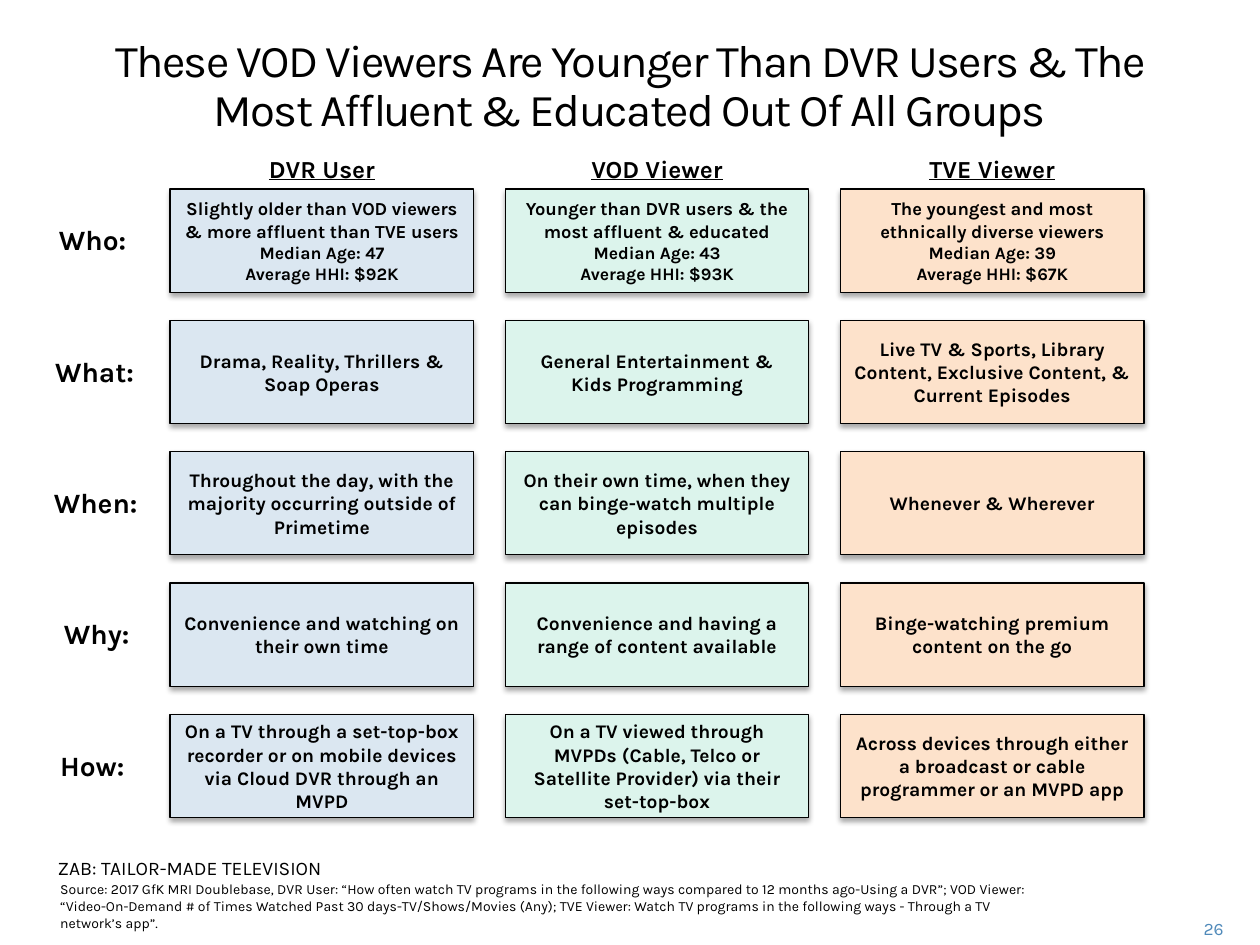
from lxml.etree import SubElement
from pptx import Presentation
from pptx.dml.color import RGBColor
from pptx.enum.shapes import MSO_SHAPE
from pptx.enum.text import MSO_ANCHOR, PP_ALIGN
from pptx.oxml.ns import qn
from pptx.util import Inches, Pt

BLACK = RGBColor(0x00, 0x00, 0x00)
PAGE_BLUE = RGBColor(0x50, 0x8A, 0xBA)
DVR_BLUE = RGBColor(0xDB, 0xE7, 0xF1)
VOD_GREEN = RGBColor(0xDC, 0xF4, 0xEC)
TVE_ORANGE = RGBColor(0xFD, 0xE2, 0xCB)
FONT = "Karla"

# Content
TITLE = "These VOD Viewers Are Younger Than DVR Users & The Most Affluent & Educated Out Of All Groups"
QUESTIONS = [("Who:", 0.37), ("What:", 0.34), ("When:", 0.33), ("Why:", 0.41), ("How:", 0.38)]  # label, left
GROUPS = [
    ("DVR User", DVR_BLUE, [
        ["Slightly older than VOD viewers & more affluent than TVE users",
         "Median Age: 47", "Average HHI: $92K"],
        ["Drama, Reality, Thrillers & Soap Operas"],
        ["Throughout the day, with the majority occurring outside of Primetime"],
        ["Convenience and watching on their own time"],
        ["On a TV through a set-top-box recorder or on mobile devices via Cloud DVR through an MVPD"],
    ]),
    ("VOD Viewer", VOD_GREEN, [
        ["Younger than DVR users & the most affluent & educated",
         "Median Age: 43", "Average HHI: $93K"],
        ["General Entertainment & Kids Programming"],
        ["On their own time, when they can binge-watch multiple episodes"],
        ["Convenience and having a range of content available"],
        ["On a TV viewed through MVPDs (Cable, Telco or Satellite Provider) via their set-top-box"],
    ]),
    ("TVE Viewer", TVE_ORANGE, [
        ["The youngest and most ethnically diverse viewers",
         "Median Age: 39", "Average HHI: $67K"],
        ["Live TV & Sports, Library Content, Exclusive Content, & Current Episodes"],
        ["Whenever & Wherever"],
        ["Binge-watching premium content on the go"],
        ["Across devices through either a broadcast or cable programmer or an MVPD app"],
    ]),
]
REPORT = "ZAB: TAILOR-MADE TELEVISION"
SOURCE = ("Source: 2017 GfK MRI Doublebase, DVR User: “How often watch TV programs in the following ways "
          "compared to 12 months ago-Using a DVR”; VOD Viewer: “Video-On-Demand # of Times Watched Past "
          "30 days-TV/Shows/Movies (Any); TVE Viewer: Watch TV programs in the following ways - "
          "Through a TV network’s app”.")
PAGE = "26"

# Grid, in inches
GRID_LEFT, GRID_TOP = 1.35, 1.5
COLUMN_STEP, ROW_STEP = 2.66, 1.042
CARD_WIDTH, CARD_HEIGHT = 2.41, 0.82
HEADING_WIDTH, HEADING_HEIGHT = 2, 0.34


def style(paragraph, text, size, align=PP_ALIGN.LEFT, bold=False, color=BLACK):
    paragraph.text = text
    paragraph.alignment = align
    font = paragraph.font
    font.name, font.size, font.bold = FONT, Pt(size), bold
    font.color.rgb = color


def add_label(slide, text, left, top, width, height, size, **look):
    label = slide.shapes.add_textbox(Inches(left), Inches(top), Inches(width), Inches(height))
    label.text_frame.word_wrap = True
    paragraph = label.text_frame.paragraphs[0]
    style(paragraph, text, size, **look)
    return paragraph


def add_soft_shadow(card):
    card.shadow.inherit = False
    effects = card._element.spPr.find(qn("a:effectLst"))
    shadow = SubElement(effects, qn("a:outerShdw"), blurRad=str(Pt(3.1)), dist=str(Pt(1.8)),
                        dir="5400000", rotWithShape="0")
    color = SubElement(shadow, qn("a:srgbClr"), val=str(BLACK))
    SubElement(color, qn("a:alpha"), val="35000")


def add_card(slide, lines, left, top, fill):
    card = slide.shapes.add_shape(MSO_SHAPE.RECTANGLE, Inches(left), Inches(top),
                                  Inches(CARD_WIDTH), Inches(CARD_HEIGHT))
    card.fill.solid()
    card.fill.fore_color.rgb = fill
    card.line.color.rgb = BLACK
    card.line.width = Pt(0.75)
    add_soft_shadow(card)
    frame = card.text_frame
    frame.word_wrap = True
    frame.vertical_anchor = MSO_ANCHOR.MIDDLE
    sizes = [11] if len(lines) == 1 else [10.5, 10, 10]
    for index, (line, size) in enumerate(zip(lines, sizes)):
        paragraph = frame.add_paragraph() if index else frame.paragraphs[0]
        style(paragraph, line, size, align=PP_ALIGN.CENTER, bold=True)


def main():
    deck = Presentation()
    deck.slide_width, deck.slide_height = Inches(10), Inches(7.5)
    slide = deck.slides.add_slide(deck.slide_layouts[6])

    # Title
    title = add_label(slide, TITLE, 0.4, 0.25, 9.2, 0.82, 26, align=PP_ALIGN.CENTER)
    title.line_spacing = Pt(28)
    title.runs[0].font._element.set("spc", "-100")

    # Viewer groups: a heading over a column of cards
    for column, (group, fill, answers) in enumerate(GROUPS):
        left = GRID_LEFT + column * COLUMN_STEP
        heading = add_label(slide, group, left + (CARD_WIDTH - HEADING_WIDTH) / 2,
                            GRID_TOP - HEADING_HEIGHT + 0.01, HEADING_WIDTH, HEADING_HEIGHT, 14,
                            align=PP_ALIGN.CENTER, bold=True)
        heading.font.underline = True
        for row, lines in enumerate(answers):
            add_card(slide, lines, left, GRID_TOP + row * ROW_STEP, fill)

    # Row questions
    for row, (question, left) in enumerate(QUESTIONS):
        add_label(slide, question, left, GRID_TOP + 0.22 + row * ROW_STEP, 0.9, 0.37, 16, bold=True)

    # Footer
    add_label(slide, SOURCE, 0.38, 6.94, 7.96, 0.5, 8)
    add_label(slide, REPORT, 0.36, 6.75, 3.08, 0.47, 11)
    add_label(slide, PAGE, 9.2, 7.24, 0.61, 0.25, 10, align=PP_ALIGN.RIGHT, color=PAGE_BLUE)

    deck.save("out.pptx")


if __name__ == "__main__":
    main()
